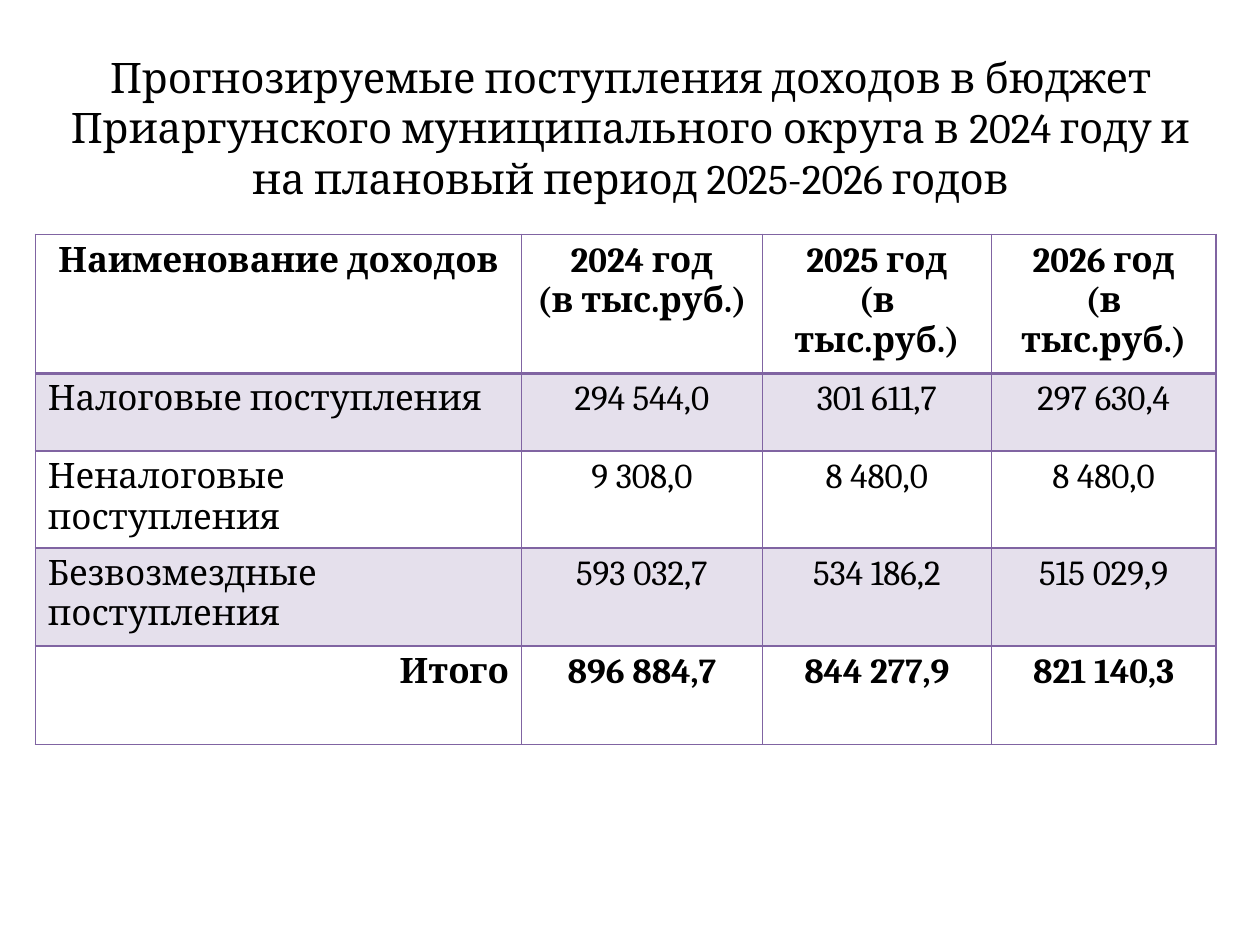
from lxml import etree
from pptx import Presentation
from pptx.dml.color import RGBColor
from pptx.enum.text import MSO_AUTO_SIZE, PP_ALIGN
from pptx.oxml.ns import qn
from pptx.util import Inches, Pt

LEFT, CENTER, RIGHT = PP_ALIGN.LEFT, PP_ALIGN.CENTER, PP_ALIGN.RIGHT
FIT_SHAPE = MSO_AUTO_SIZE.SHAPE_TO_FIT_TEXT
SLIDE_WIDTH, SLIDE_HEIGHT = Inches(10), Inches(7.5)
BLACK, PURPLE = "000000", "8064A2"
BAND_ALPHA = 20

TITLE = (
    "Прогнозируемые поступления доходов в бюджет Приаргунского "
    "муниципального округа в 2024 году и на плановый период 2025-2026 годов"
)
HEADINGS = ["Наименование доходов"] + [
    f"{year} год\n(в тыс.руб.)" for year in (2024, 2025, 2026)
]
INCOME = [
    HEADINGS,
    ["Налоговые поступления", "294 544,0", "301 611,7", "297 630,4"],
    ["Неналоговые поступления", "9 308,0", "8 480,0", "8 480,0"],
    ["Безвозмездные поступления", "593 032,7", "534 186,2", "515 029,9"],
    ["Итого", "896 884,7", "844 277,9", "821 140,3"],
]
COLUMN_PERCENTS = [38.6, 19.1, 18.2, 17.8]
ROW_PERCENTS = [13.47, 8.27, 7.87, 10.4, 10.4]


def across(percent):
    return round(SLIDE_WIDTH * percent / 100)


def down(percent):
    return round(SLIDE_HEIGHT * percent / 100)


def color(hex_value):
    return RGBColor.from_string(hex_value)


def write(frame, wording, size, align, bold=False):
    line = frame.paragraphs[0]
    line.text = wording
    line.alignment = align
    formats = {"name": "Cambria", "size": Pt(size), "bold": bold}
    for run in line.runs:
        for attribute, setting in formats.items():
            setattr(run.font, attribute, setting)
        run.font.color.rgb = color(BLACK)


def add_title(slide):
    title = slide.shapes.add_textbox(across(2.8), down(4.8), across(94.5), down(17.47))
    title.text_frame.word_wrap = True
    title.text_frame.auto_size = FIT_SHAPE
    write(title.text_frame, TITLE, 24, CENTER)


def add_borders(cell, widths):
    properties = cell._tc.get_or_add_tcPr()
    for side, width in widths.items():
        border = etree.SubElement(properties, qn(f"a:ln{side}"), w=str(Pt(width)))
        paint = etree.SubElement(border, qn("a:solidFill"))
        etree.SubElement(paint, qn("a:srgbClr"), val=PURPLE)


def fill_band(cell):
    cell.fill.solid()
    cell.fill.fore_color.rgb = color(PURPLE)
    tint = cell._tc.tcPr.find(f"{qn('a:solidFill')}/{qn('a:srgbClr')}")
    etree.SubElement(tint, qn("a:alpha"), val=str(BAND_ALPHA * 1000))


def add_income_table(slide):
    table = slide.shapes.add_table(
        len(INCOME), len(HEADINGS), across(2.8), down(24.8),
        across(sum(COLUMN_PERCENTS)), down(sum(ROW_PERCENTS)),
    ).table
    table.first_row = table.horz_banding = False
    for column, percent in zip(table.columns, COLUMN_PERCENTS):
        column.width = across(percent)
    for row, percent in zip(table.rows, ROW_PERCENTS):
        row.height = down(percent)
    total_row = len(INCOME) - 1
    for row_index, entries in enumerate(INCOME):
        for column_index, wording in enumerate(entries):
            cell = table.cell(row_index, column_index)
            align = CENTER
            if column_index == 0 and row_index > 0:
                align = RIGHT if row_index == total_row else LEFT
            write(cell.text_frame, wording, 20, align, row_index in (0, total_row))
            add_borders(cell, {
                "L": 1, "R": 1,
                "T": 2 if row_index == 1 else 1,
                "B": 2 if row_index == 0 else 1,
            })
            if row_index % 2:
                fill_band(cell)
            else:
                cell.fill.background()


def main():
    deck = Presentation()
    deck.slide_width, deck.slide_height = SLIDE_WIDTH, SLIDE_HEIGHT
    slide = deck.slides.add_slide(deck.slide_layouts[6])
    add_title(slide)
    add_income_table(slide)
    deck.save("out.pptx")


if __name__ == "__main__":
    main()
